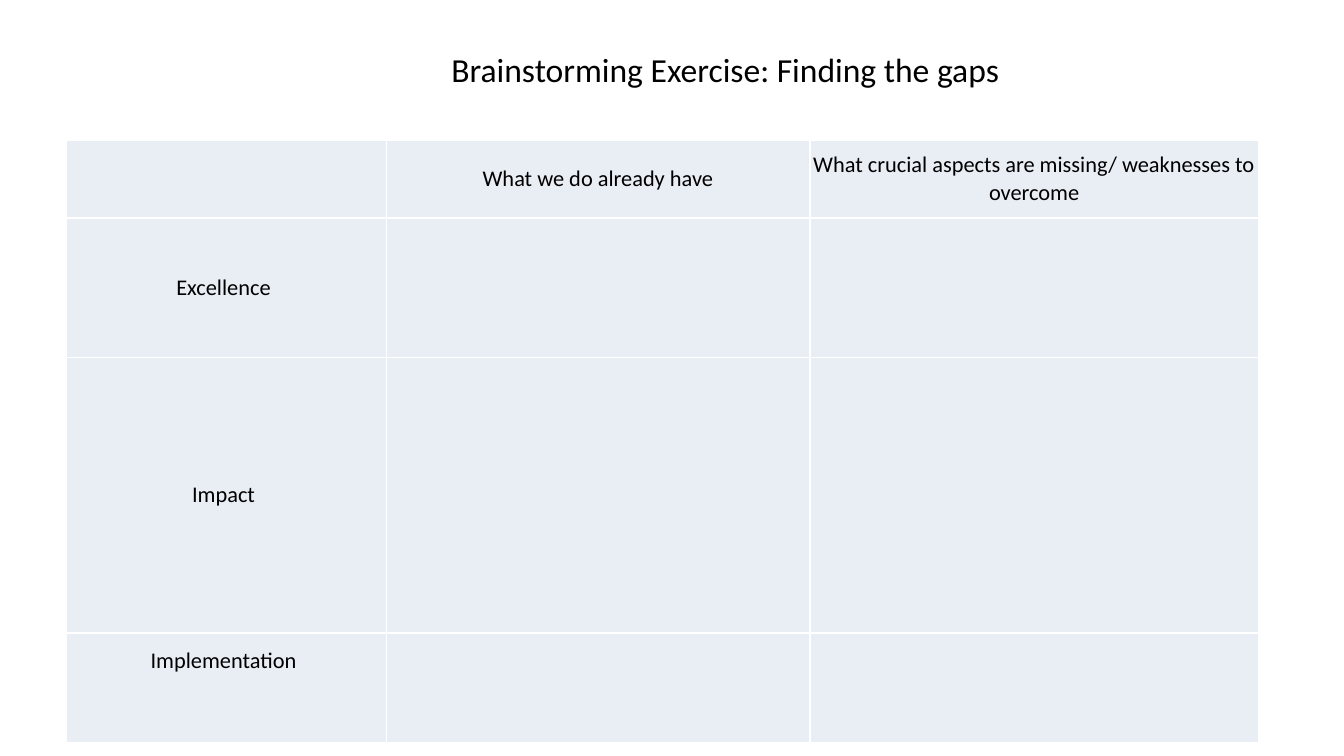
from typing import NamedTuple

from lxml.etree import SubElement
from pptx import Presentation
from pptx.dml.color import RGBColor
from pptx.enum.text import MSO_ANCHOR, MSO_AUTO_SIZE, PP_ALIGN
from pptx.oxml.ns import qn
from pptx.util import Emu, Pt

EMU_PER_PX = 4572
FONT = "Calibri"
COLOURS = {"text": "000000", "cell": "E9EDF4", "border": "FFFFFF"}
COLUMN_WIDTHS = (477, 630, 668)


class GridRow(NamedTuple):
    height: int
    texts: tuple[str, str, str]
    bottom: int = 0


ROWS = (
    GridRow(116, ("", "What we do already have",
                  "What crucial aspects are missing/ weaknesses to overcome")),
    GridRow(208, ("Excellence ", "", "")),
    GridRow(410, ("Impact ", "", "")),
    GridRow(164, ("Implementation ", "", ""), bottom=80),
)


def px(length: int) -> Emu:
    return Emu(length * EMU_PER_PX)


def apply_format(target, values: dict) -> None:
    for name, value in values.items():
        setattr(target, name, value)


def write_text(para, text: str, size: int) -> None:
    span = para.add_run()
    span.text = text
    apply_format(span.font, {"size": Pt(size), "name": FONT})
    span.font.color.rgb = RGBColor.from_string(COLOURS["text"])


def add_borders(cell) -> None:
    properties = cell._tc.get_or_add_tcPr()
    for position, side in enumerate(("lnL", "lnR", "lnT", "lnB")):
        line = SubElement(properties, qn(f"a:{side}"), w=str(Pt(1)))
        fill = SubElement(line, qn("a:solidFill"))
        SubElement(fill, qn("a:srgbClr"), val=COLOURS["border"])
        properties.insert(position, line)


def format_cell(cell, text: str, bottom: int) -> None:
    apply_format(cell, {
        "vertical_anchor": MSO_ANCHOR.MIDDLE,
        "margin_left": 0, "margin_right": 0,
        "margin_top": 0, "margin_bottom": px(bottom),
    })
    cell.fill.solid()
    cell.fill.fore_color.rgb = RGBColor.from_string(COLOURS["cell"])
    add_borders(cell)
    if text:
        para = cell.text_frame.paragraphs[0]
        para.alignment = PP_ALIGN.CENTER
        write_text(para, text, 12)


def add_grid(page, left: int, top: int) -> None:
    width, height = sum(COLUMN_WIDTHS), sum(row.height for row in ROWS)
    table = page.shapes.add_table(
        len(ROWS), len(COLUMN_WIDTHS), px(left), px(top), px(width), px(height)
    ).table
    apply_format(table, {"first_row": False, "horz_banding": False})
    for column, column_width in zip(table.columns, COLUMN_WIDTHS):
        column.width = px(column_width)
    for table_row, row in zip(table.rows, ROWS):
        table_row.height = px(row.height)
        for cell, text in zip(table_row.cells, row.texts):
            format_cell(cell, text, row.bottom)


def add_title(page, text: str) -> None:
    box = page.shapes.add_textbox(px(652), px(63), px(1094), px(80))
    apply_format(box.text_frame, {
        "word_wrap": True, "auto_size": MSO_AUTO_SIZE.SHAPE_TO_FIT_TEXT,
    })
    write_text(box.text_frame.paragraphs[0], text, 18)


def main() -> None:
    """Build the brainstorming slide and save it."""
    deck = Presentation()
    apply_format(deck, {"slide_width": px(2000), "slide_height": px(1125)})
    page = deck.slides.add_slide(deck.slide_layouts[6])
    add_grid(page, 98, 208)
    add_title(page, "Brainstorming Exercise: Finding the gaps")
    deck.save("out.pptx")


if __name__ == "__main__":
    main()
